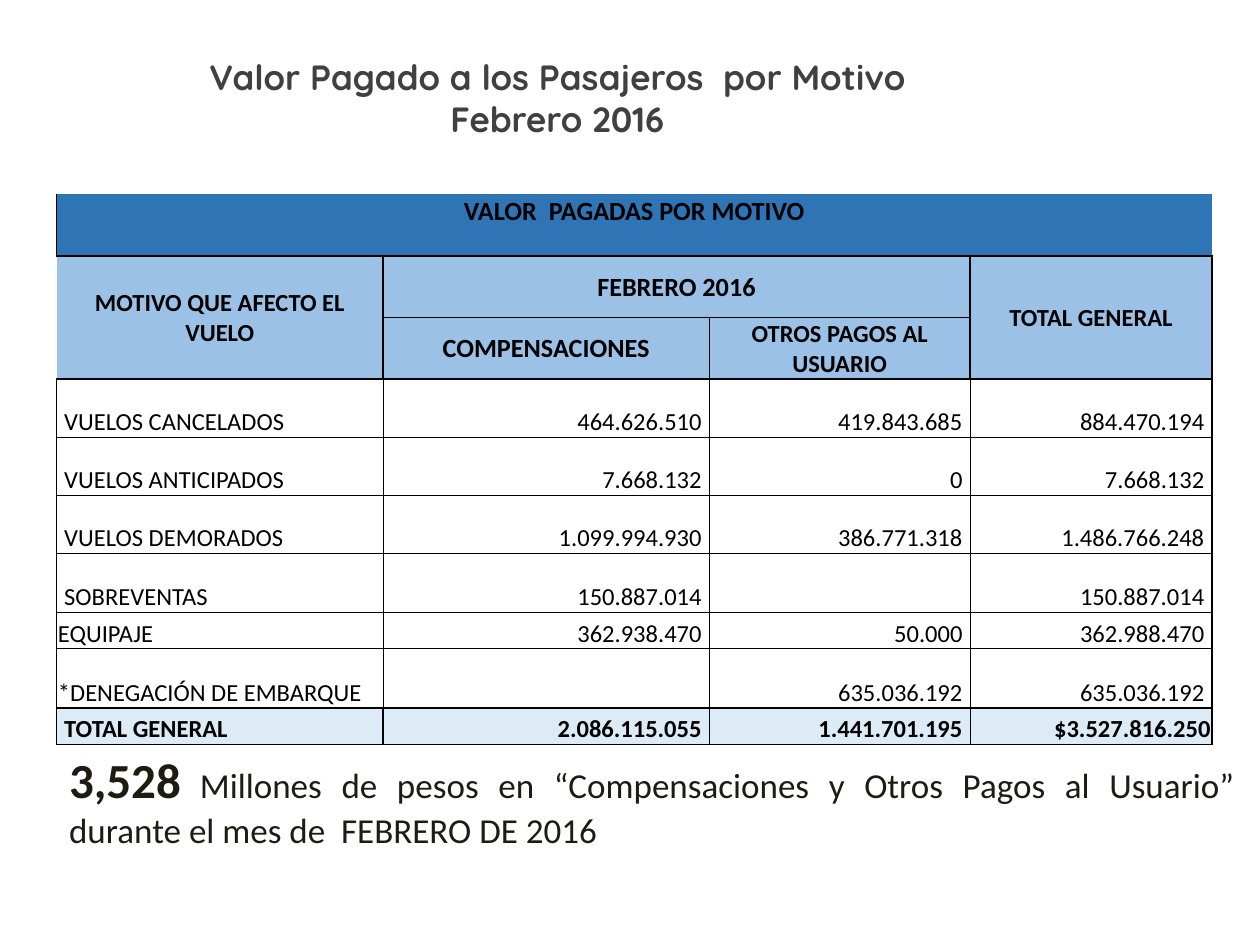
from lxml.etree import SubElement as Sub
from pptx import Presentation
from pptx.dml.color import RGBColor
from pptx.enum.text import MSO_ANCHOR as Anchor, MSO_AUTO_SIZE as Fit, PP_ALIGN as Align
from pptx.oxml.ns import qn
from pptx.util import Inches, Pt

BLACK = RGBColor(0, 0, 0)
WHITE = RGBColor(255, 255, 255)
GRAY = RGBColor(0x40, 0x40, 0x40)
OLIVE = RGBColor(0x1E, 0x1C, 0x11)
BLUE = RGBColor(0x2F, 0x75, 0xB5)
SKY = RGBColor(0x9B, 0xC2, 0xE6)
PALE = RGBColor(0xDD, 0xEB, 0xF7)
PLAIN = "{2D5ABB26-0587-4C30-8999-92F81FD0307C}"

COLS = [2.59, 2.59, 2.07, 1.92]
ROWS = [0.49] * 3 + [0.46] * 3 + [0.47, 0.29, 0.47, 0.29]
HEADS = [
    (0, 0, 0, 3, "VALOR  PAGADAS POR MOTIVO", 15),
    (1, 0, 2, 0, "MOTIVO QUE AFECTO EL VUELO", 14),
    (1, 1, 1, 2, "FEBRERO 2016", 15),
    (1, 3, 2, 3, "TOTAL GENERAL", 14),
    (2, 1, 2, 1, "COMPENSACIONES", 15),
    (2, 2, 2, 2, "OTROS PAGOS AL USUARIO", 14),
]
BODY = [
    ("VUELOS CANCELADOS", "464.626.510", "419.843.685", "884.470.194"),
    ("VUELOS ANTICIPADOS", "7.668.132", "0", "7.668.132"),
    ("VUELOS DEMORADOS", "1.099.994.930", "386.771.318", "1.486.766.248"),
    ("SOBREVENTAS", "150.887.014", "", "150.887.014"),
    ("EQUIPAJE", "362.938.470", "50.000", "362.988.470"),
    ("*DENEGACIÓN DE EMBARQUE", "", "635.036.192", "635.036.192"),
    ("TOTAL GENERAL", "2.086.115.055", "1.441.701.195", "$3.527.816.250"),
]
FLUSH = ("EQUIPAJE", "*DENEGACIÓN DE EMBARQUE", "$3.527.816.250")
FIRST = 3
LAST = len(ROWS) - 1


def edges(row, col):
    left = right = top = low = 1
    if row == 0:
        top = right = 0
    elif row < FIRST:
        left = 1 if col else 0
    elif row < LAST:
        left = 0.5 if col else 1
        right = 1 if col == 3 else 0.5
        top = 1 if row == FIRST else 0.5
        low = 1 if row == LAST - 1 else 0.5
    else:
        left = 0.5 if col == 3 else 1
        right = 0.5 if col == 2 else 1
    return {"L": left, "R": right, "T": top, "B": low}


class Deck:
    def __init__(self):
        self.prs = Presentation()
        self.prs.slide_width = Inches(10)
        self.prs.slide_height = Inches(7.5)
        self.slide = self.prs.slides.add_slide(self.prs.slide_layouts[5])
        self.face = "Calibri"

    def style(self, font, size, color, bold=False, face=None):
        font.name = face or self.face
        font.size = Pt(size)
        font.bold = bold
        font.color.rgb = color

    def title(self, lines, x, y, w, h):
        box = self.slide.shapes.title
        box.left, box.top, box.width, box.height = map(Inches, (x, y, w, h))
        frame = box.text_frame
        frame.text = "\n".join(lines)
        frame.auto_size = Fit.NONE
        frame.vertical_anchor = Anchor.TOP
        for para in frame.paragraphs:
            para.alignment = Align.CENTER
            self.style(para.font, 20, GRAY, True, "Quicksand")

    def note(self, runs, x, y, w, h):
        box = self.slide.shapes.add_textbox(*map(Inches, (x, y, w, h)))
        box.text_frame.word_wrap = True
        para = box.text_frame.paragraphs[0]
        para.alignment = Align.JUSTIFY
        for text, size, bold in runs:
            run = para.add_run()
            run.text = text
            self.style(run.font, size, OLIVE, bold)

    def table(self, x, y):
        shape = self.slide.shapes.add_table(
            len(ROWS), len(COLS), Inches(x), Inches(y),
            Inches(sum(COLS)), Inches(sum(ROWS)))
        grid = shape.table
        grid.first_row = grid.horz_banding = False
        grid._tbl.tblPr.find(qn("a:tableStyleId")).text = PLAIN
        for col, size in zip(grid.columns, COLS):
            col.width = Inches(size)
        for row, size in zip(grid.rows, ROWS):
            row.height = Inches(size)
        for top, left, low, right, text, size in HEADS:
            cell = grid.cell(top, left)
            if (top, left) != (low, right):
                cell.merge(grid.cell(low, right))
            anchor = Anchor.MIDDLE if top else Anchor.TOP
            self.fill(cell, text, size, True, Align.CENTER, anchor)
        for i, items in enumerate(BODY, FIRST):
            for j, text in enumerate(items):
                side = Align.RIGHT if j else Align.LEFT
                self.fill(grid.cell(i, j), text, 14, i == LAST, side, Anchor.BOTTOM)
        for i in range(len(ROWS)):
            shade = BLUE if i == 0 else SKY if i < FIRST else PALE if i == LAST else WHITE
            for j in range(len(COLS)):
                cell = grid.cell(i, j)
                self.border(cell, edges(i, j))
                cell.fill.solid()
                cell.fill.fore_color.rgb = shade

    def fill(self, cell, text, size, bold, side, anchor):
        pad = 0.01 if side == Align.CENTER or text in FLUSH else 0.06
        cell.margin_left = cell.margin_right = Inches(pad)
        cell.margin_top, cell.margin_bottom = Inches(0.01), 0
        cell.vertical_anchor = anchor
        cell.text = text
        para = cell.text_frame.paragraphs[0]
        para.alignment = side
        self.style(para.font, size, BLACK, bold)

    def border(self, cell, sides):
        props = cell._tc.get_or_add_tcPr()
        for side, width in sides.items():
            if cell.is_spanned and side in "LT":
                continue
            line = Sub(props, qn("a:ln" + side), w=str(Pt(width)))
            if width:
                ink = Sub(line, qn("a:solidFill"))
                Sub(ink, qn("a:srgbClr"), val=str(BLACK))
            else:
                Sub(line, qn("a:noFill"))


def main():
    deck = Deck()
    deck.title(["Valor Pagado a los Pasajeros  por Motivo", "Febrero 2016"],
               0.28, 0.39, 8.29, 0.79)
    deck.note([
        ("3,528", 28, True),
        (" ", 18, True),
        ("Millones de pesos en “Compensaciones y Otros Pagos al Usuario” "
         "durante el mes de  FEBRERO DE 2016", 20, False),
    ], 0.45, 5.9, 9.45, 0.91)
    deck.table(0.45, 1.54)
    deck.prs.save("out.pptx")


if __name__ == "__main__":
    main()
